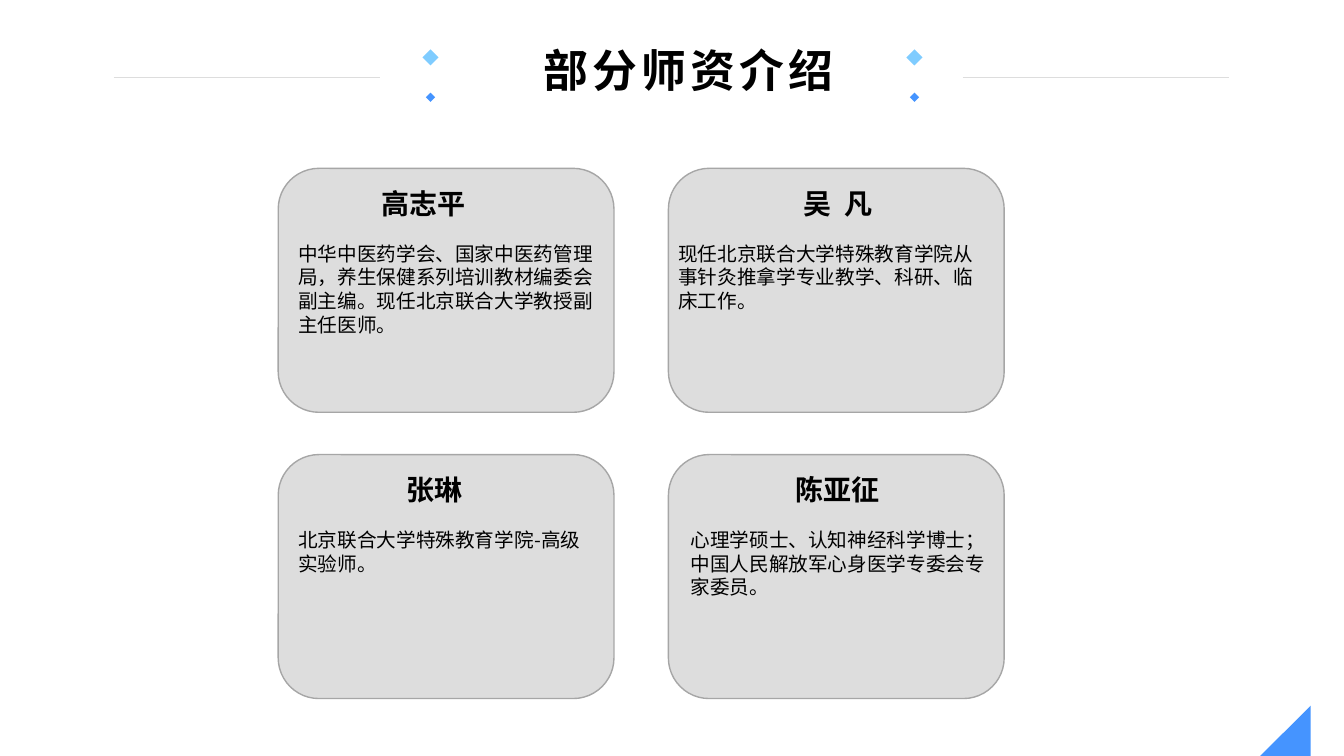
from lxml.etree import SubElement
from pptx import Presentation
from pptx.dml.color import RGBColor
from pptx.enum.shapes import MSO_CONNECTOR, MSO_SHAPE
from pptx.enum.text import MSO_ANCHOR, MSO_AUTO_SIZE, PP_ALIGN
from pptx.oxml.ns import qn
from pptx.util import Inches, Pt

COLORS = {"sky": "7FCCFF", "blue": "4594FF", "card": "DDDDDD",
          "edge": "A6A6A6", "rule": "DDDDDD", "text": "000000"}
FONT = "Noto Sans CJK SC"


def paint(shape, fill, line=None):
    shape.shadow.inherit = False
    shape.fill.solid()
    shape.fill.fore_color.rgb = RGBColor.from_string(COLORS[fill])
    if line:
        shape.line.color.rgb = RGBColor.from_string(COLORS[line])
        shape.line.width = Pt(1)
    else:
        shape.line.fill.background()


def write(box, text, size, bold=False, align=PP_ALIGN.LEFT, wrap=True, spacing=0):
    frame = box.text_frame
    frame.text = text
    frame.word_wrap = wrap
    frame.auto_size = MSO_AUTO_SIZE.SHAPE_TO_FIT_TEXT
    frame.vertical_anchor = MSO_ANCHOR.TOP
    paragraph = frame.paragraphs[0]
    paragraph.alignment = align
    span = paragraph.runs[0]
    span.font.size = Pt(size)
    span.font.bold = bold
    span.font.name = FONT
    span.font.color.rgb = RGBColor.from_string(COLORS["text"])
    properties = span.font._element
    SubElement(properties, qn("a:ea")).set("typeface", FONT)
    if spacing:
        properties.set("spc", str(spacing * 100))


deck = Presentation()
deck.slide_width, deck.slide_height = Inches(13.33), Inches(7.5)
page = deck.slides.add_slide(deck.slide_layouts[5])
shapes = page.shapes

title = shapes.title
title.left, title.top = Inches(5.29), Inches(0.37)
title.width, title.height = Inches(3.12), Inches(0.64)
write(title, "部分师资介绍", 32, bold=True, wrap=False, spacing=3)

for center in (4.27, 9.07):
    for middle, size, color in ((0.57, 0.16, "sky"), (0.965, 0.09, "blue")):
        diamond = shapes.add_shape(
            MSO_SHAPE.DIAMOND, Inches(center - size / 2), Inches(middle - size / 2),
            Inches(size), Inches(size))
        paint(diamond, color)

for start in (1.13, 9.55):
    rule = shapes.add_connector(MSO_CONNECTOR.STRAIGHT, Inches(start), Inches(0.77),
                                Inches(start + 2.64), Inches(0.77))
    rule.line.color.rgb = RGBColor.from_string(COLORS["rule"])
    rule.line.width = Pt(0.5)
    SubElement(rule._element.spPr, qn("a:effectLst"))

corners = [
    ("sky", [(13.33, 6.86), (13.33, 7.3), (13.11, 7.08)]),
    ("blue", [(12.93, 7.05), (13.33, 7.45), (13.33, 7.5), (12.48, 7.5)]),
]
for color, points in corners:
    builder = shapes.build_freeform(*points[0], scale=Inches(1))
    builder.add_line_segments(points[1:], close=True)
    paint(builder.convert_to_shape(), color)

LEFT, TOP = 2.76, 1.67
CARD_WIDTH, CARD_HEIGHT = 3.33, 2.42
COLUMN_STEP, ROW_STEP = 3.87, 2.84
teachers = [
    ("高志平", 4.2, 2.86, "中华中医药学会、国家中医药管理局，养生保健系列培训教材编委会副主编。现任北京联合大学教授副主任医师。"),
    ("吴  凡", 8.31, 6.63, "现任北京联合大学特殊教育学院从事针灸推拿学专业教学、科研、临床工作。"),
    ("张琳", 4.31, 2.86, "北京联合大学特殊教育学院-高级实验师。"),
    ("陈亚征", 8.31, 6.75, "心理学硕士、认知神经科学博士；中国人民解放军心身医学专委会专家委员。"),
]
for index, (name, name_center, bio_left, bio) in enumerate(teachers):
    row, column = divmod(index, 2)
    top = TOP + row * ROW_STEP
    card = shapes.add_shape(
        MSO_SHAPE.ROUNDED_RECTANGLE, Inches(LEFT + column * COLUMN_STEP), Inches(top),
        Inches(CARD_WIDTH), Inches(CARD_HEIGHT))
    paint(card, "card", "edge")

    name_box = shapes.add_textbox(Inches(name_center - 0.52), Inches(top + 0.13),
                                  Inches(1.04), Inches(0.44))
    write(name_box, name, 20, bold=True, align=PP_ALIGN.CENTER, wrap=False)

    bio_box = shapes.add_textbox(Inches(bio_left), Inches(top + 0.68),
                                 Inches(3.13), Inches(0.81))
    write(bio_box, bio, 14)

deck.save("out.pptx")
